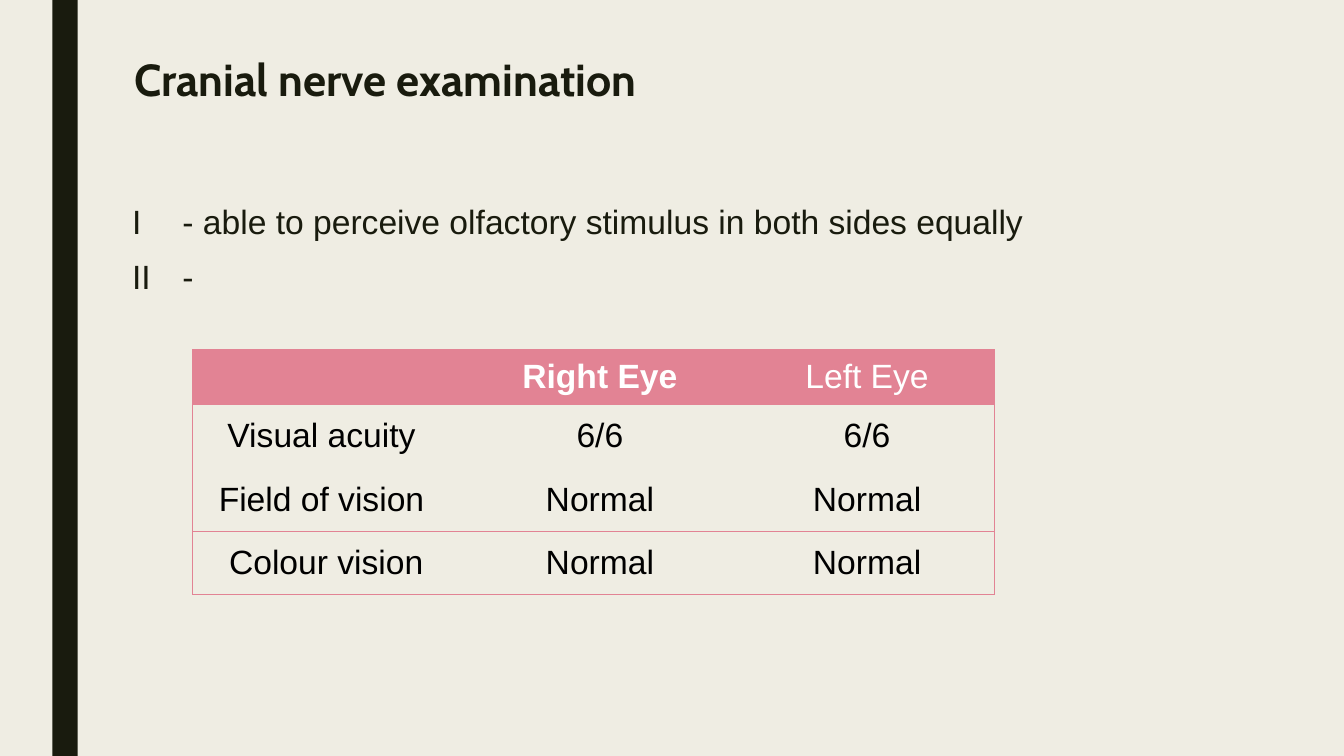
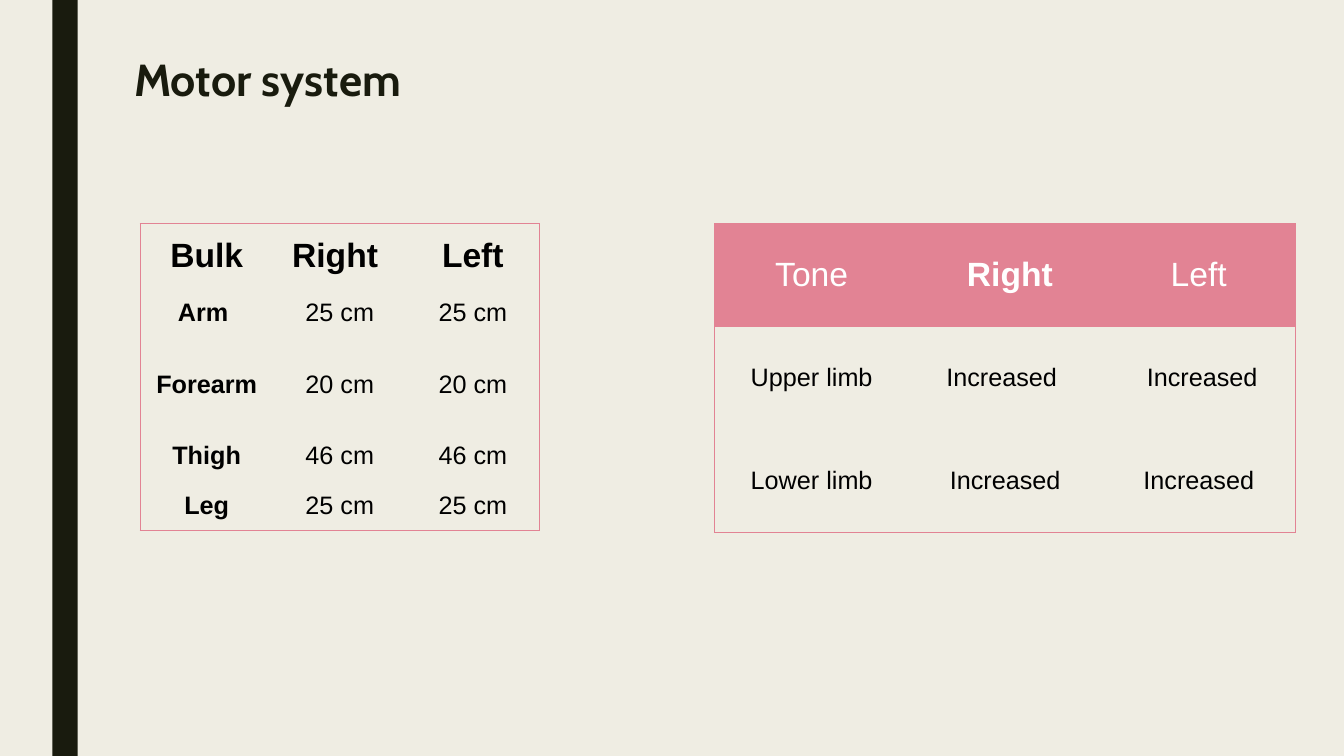
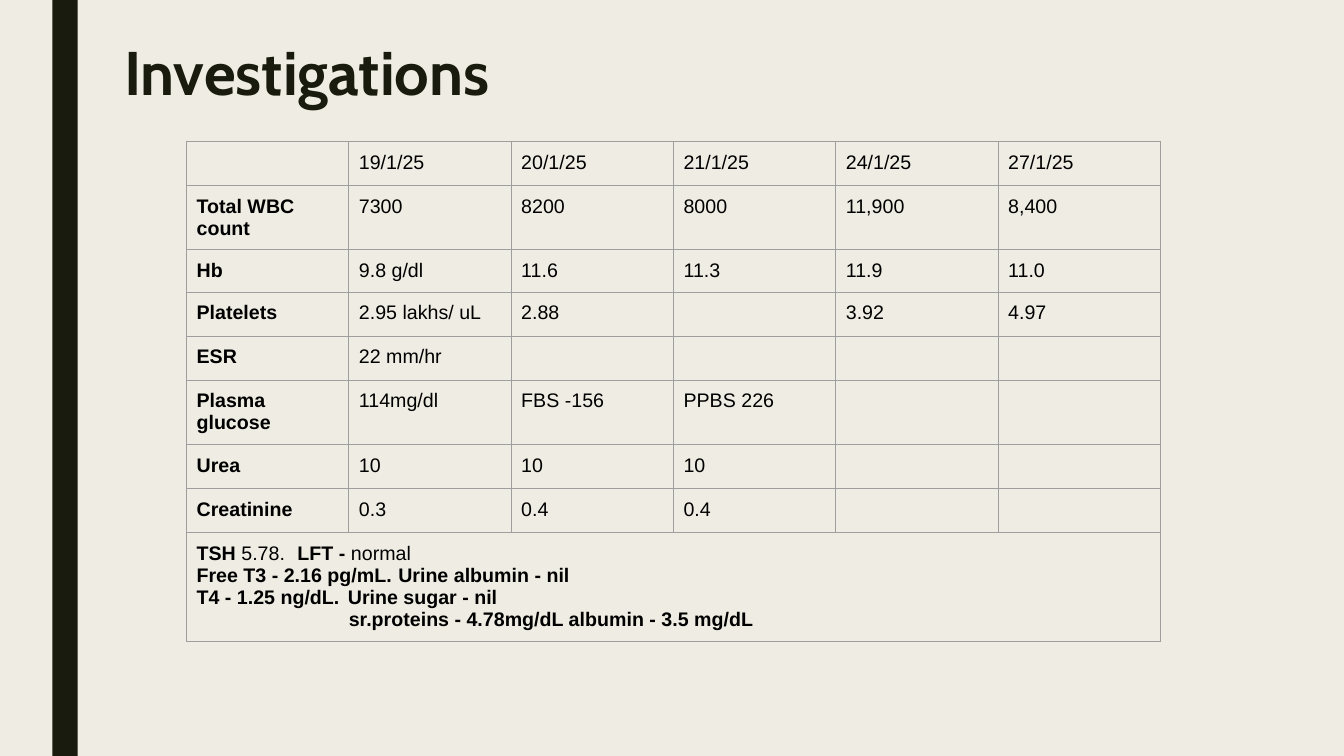
from dataclasses import dataclass

from lxml import etree
from pptx import Presentation
from pptx.dml.color import RGBColor
from pptx.enum.shapes import MSO_SHAPE
from pptx.enum.text import MSO_ANCHOR, MSO_AUTO_SIZE, PP_ALIGN
from pptx.oxml.ns import qn
from pptx.util import Inches, Pt

RECT = MSO_SHAPE.RECTANGLE
TOP, MIDDLE = MSO_ANCHOR.TOP, MSO_ANCHOR.MIDDLE
LEFT, CENTER = PP_ALIGN.LEFT, PP_ALIGN.CENTER
NO_FIT = MSO_AUTO_SIZE.NONE
PLAIN_TABLE = "{2D5ABB26-0587-4C30-8999-92F81FD0307C}"
TITLE_ONLY, TITLE_BODY = 5, 1


@dataclass(frozen=True)
class Theme:
    paper: str = "EFEDE3"
    ink: str = "191B0E"
    pink: str = "E28394"
    grey: str = "9E9E9E"
    black: str = "000000"
    white: str = "FFFFFF"
    head_font: str = "Cabin"
    body_font: str = "Arial"
    title: int = 32
    big_title: int = 44
    head: int = 24
    cell: int = 18
    small: int = 14
    rule: float = 0.75


T = Theme()

CRANIAL_NOTES = [
    "I\t- able to perceive olfactory stimulus in both sides equally",
    "II\t-",
]
VISION = [
    ["", "Right Eye", "Left Eye"],
    ["Visual acuity ", "6/6", "6/6"],
    ["Field of vision ", "Normal", "Normal"],
    ["Colour vision", "Normal", "Normal"],
]
TONE = [
    ["Tone", " Right", "Left"],
    ["Upper limb", "Increased ", " Increased"],
    ["Lower limb", "Increased", "Increased"],
]
BULK = [
    ["Bulk", "Right ", "Left"],
    ["Arm ", "25 cm", "25 cm"],
    ["Forearm", "20 cm", "20 cm"],
    ["Thigh", "46 cm", "46 cm"],
    ["Leg", "25 cm", "25 cm"],
]
LABS = [
    ["", "19/1/25", "20/1/25", "21/1/25", "24/1/25", "27/1/25"],
    ["Total WBC count", "7300", "8200", "8000", "11,900", "8,400"],
    ["Hb", "9.8 g/dl", "11.6", "11.3", "11.9", "11.0"],
    ["Platelets", "2.95 lakhs/ uL", "2.88", "", "3.92", "4.97"],
    ["ESR", "22 mm/hr", "", "", "", ""],
    ["Plasma glucose", "114mg/dl", "FBS -156", "PPBS 226", "", ""],
    ["Urea", "10", "10", "10", "", ""],
    ["Creatinine", "0.3", "0.4", "0.4", "", ""],
    [""] * 6,
]
OTHER_LABS = [
    [("TSH ", True), ("5.78.\t", False), ("LFT - ", True), ("normal", False)],
    "Free T3 - 2.16 pg/mL.\tUrine albumin - nil",
    "T4 - 1.25 ng/dL.\tUrine sugar - nil",
]
PROTEINS = "sr.proteins - 4.78mg/dL albumin - 3.5 mg/dL"


def rgb(color):
    return RGBColor.from_string(color)


def write(p, text, size, color=T.black, font=T.body_font, bold=False,
          align=LEFT, spacing=None, before=0, indent=0, tab=None):
    p.alignment = align
    p.space_before = Pt(before)
    if spacing:
        p.line_spacing = spacing
    pPr = p._p.get_or_add_pPr()
    pPr.set("marL", str(Inches(indent)))
    pPr.set("indent", "0")
    etree.SubElement(pPr, qn("a:buNone"))
    if tab:
        tabs = etree.SubElement(pPr, qn("a:tabLst"))
        etree.SubElement(tabs, qn("a:tab"), pos=str(Inches(tab)), algn="l")
    runs = [(text, bold)] if isinstance(text, str) else text
    for words, heavy in runs:
        if not words:
            p._p.get_or_add_endParaRPr().set("sz", str(size * 100))
            continue
        r = p.add_run()
        r.text = words
        r.font.name, r.font.size, r.font.bold = font, Pt(size), heavy
        r.font.color.rgb = rgb(color)


def place(sp, x, y, w, h):
    sp.left, sp.top, sp.width, sp.height = (Inches(v) for v in (x, y, w, h))
    tf = sp.text_frame
    tf.word_wrap, tf.auto_size, tf.vertical_anchor = True, NO_FIT, TOP
    return tf


def add_slide(prs, layout, title, box, size=T.title):
    slide = prs.slides.add_slide(prs.slide_layouts[layout])
    tf = place(slide.shapes.title, *box)
    write(tf.paragraphs[0], title, size, T.ink, T.head_font, True, spacing=0.89)
    return slide


def set_borders(cell, sides, color):
    tcPr = cell._tc.get_or_add_tcPr()
    for i, side in enumerate("LRTB"):
        ln = etree.Element(qn("a:ln" + side), w=str(Pt(T.rule)))
        if side in sides:
            fill = etree.SubElement(ln, qn("a:solidFill"))
            etree.SubElement(fill, qn("a:srgbClr"), val=color)
        else:
            etree.SubElement(ln, qn("a:noFill"))
        tcPr.insert(i, ln)


def add_table(slide, data, x, y, cols, rows, style, rules=(), line=T.pink,
              fill_head=False, anchor=MIDDLE, margins=(0.1, 0.05), grid=False):
    n, m = len(rows), len(cols)
    frame = slide.shapes.add_table(n, m, Inches(x), Inches(y),
                                   Inches(sum(cols)), Inches(sum(rows)))
    table = frame.table
    table.first_row = table.horz_banding = False
    table._tbl.tblPr.find(qn("a:tableStyleId")).text = PLAIN_TABLE
    for col, w in zip(table.columns, cols):
        col.width = Inches(w)
    for row, h in zip(table.rows, rows):
        row.height = Inches(h)
    for i, texts in enumerate(data):
        for j, text in enumerate(texts):
            cell = table.cell(i, j)
            cell.vertical_anchor = anchor
            cell.margin_left = cell.margin_right = Inches(margins[0])
            cell.margin_top = cell.margin_bottom = Inches(margins[1])
            if fill_head and i == 0:
                cell.fill.solid()
                cell.fill.fore_color.rgb = rgb(T.pink)
            else:
                cell.fill.background()
            edges = {"L": j == 0, "R": j == m - 1,
                     "T": i == 0 or i in rules, "B": i == n - 1 or i + 1 in rules}
            set_borders(cell, [s for s in edges if grid or edges[s]], line)
            write(cell.text_frame.paragraphs[0], text, **style(i, j))
    return table


def pink_head(size):
    def style(i, j):
        if i == 0:
            return dict(size=T.head, color=T.white, bold=j == 1, align=CENTER)
        return dict(size=size, align=CENTER)
    return style


def bulk_style(i, j):
    return dict(size=T.cell if i else T.head, bold=i == 0 or j == 0, align=CENTER)


def lab_style(i, j):
    return dict(size=T.small, bold=j == 0)


def add_master_band(prs, slide):
    master = prs.slide_master
    master.background.fill.solid()
    master.background.fill.fore_color.rgb = rgb(T.paper)
    band = slide.shapes.add_shape(RECT, Inches(0.52), 0, Inches(0.25), prs.slide_height)
    band.shadow.inherit = False
    band.fill.solid()
    band.fill.fore_color.rgb = rgb(T.ink)
    band.line.fill.background()
    master.shapes._spTree.insert(2, band._element)


def cranial_slide(prs):
    slide = add_slide(prs, TITLE_BODY, "Cranial nerve examination",
                      (1.23, 0.53, 12.27, 1.16))
    tf = place(slide.placeholders[1], 1.21, 1.98, 12.27, 4.58)
    for i, note in enumerate(CRANIAL_NOTES):
        p = tf.add_paragraph() if i else tf.paragraphs[0]
        write(p, note, T.head, T.ink, spacing=0.94, before=12 if i else 0, tab=0.27)
    add_table(slide, VISION, 1.91, 3.47, [2.65, 2.78, 2.52], [0.54] + [0.63] * 3,
              pink_head(T.head), rules=(1, 3), fill_head=True)
    return slide


def motor_slide(prs):
    slide = add_slide(prs, TITLE_ONLY, "Motor system", (1.23, 0.53, 12.27, 0.84))
    add_table(slide, TONE, 7.09, 2.22, [1.92] * 3, [1.02] * 3,
              pink_head(T.cell), rules=(1,), fill_head=True)
    add_table(slide, BULK, 1.39, 2.22, [1.32] * 3, [0.64, 0.49, 0.93, 0.49, 0.49],
              bulk_style, margins=(0.04, 0.02))


def labs_slide(prs):
    slide = add_slide(prs, TITLE_ONLY, "Investigations", (1.13, 0.38, 6.57, 0.92),
                      T.big_title)
    one, two, last = 0.42, 0.64, 1.08
    rows = [one, two, one, one, one, two, one, one, last]
    table = add_table(slide, LABS, 1.85, 1.4, [1.61] * 6, rows, lab_style,
                      line=T.grey, anchor=TOP, margins=(0.1, 0.1), grid=True)
    summary = table.cell(len(rows) - 1, 0)
    summary.merge(table.cell(len(rows) - 1, 5))
    tf = summary.text_frame
    for i, text in enumerate(OTHER_LABS):
        p = tf.add_paragraph() if i else tf.paragraphs[0]
        if not i:
            p._p.remove(p._p.pPr)
        write(p, text, T.small, bold=True, tab=3.11)
    write(tf.add_paragraph(), PROTEINS, T.small, bold=True, indent=1.51)


def main():
    prs = Presentation()
    prs.slide_width, prs.slide_height = Inches(13.33), Inches(7.5)
    add_master_band(prs, cranial_slide(prs))
    motor_slide(prs)
    labs_slide(prs)
    prs.save("out.pptx")


if __name__ == "__main__":
    main()
